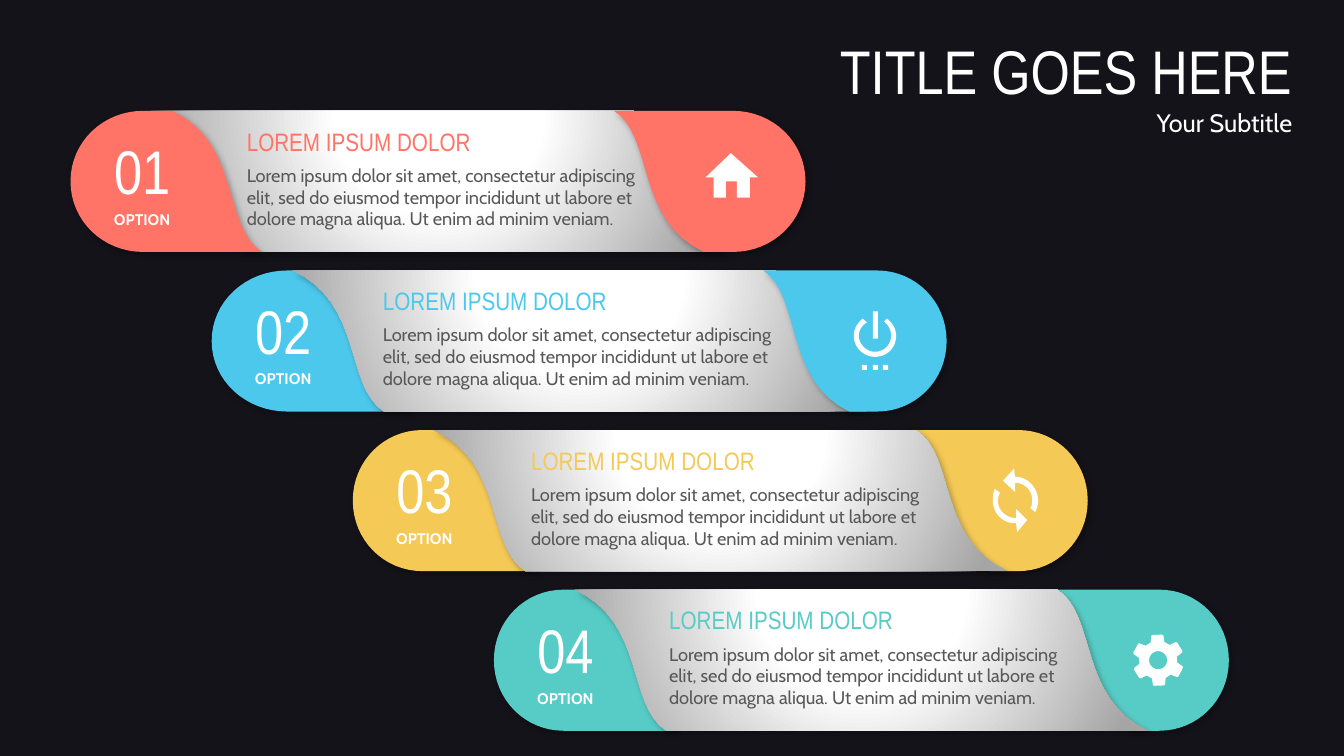
from dataclasses import dataclass
from math import cos, radians, sin

from lxml import etree
from pptx import Presentation
from pptx.dml.color import RGBColor
from pptx.enum.text import MSO_ANCHOR as Anchor, MSO_AUTO_SIZE as AutoSize, PP_ALIGN as Align
from pptx.oxml import parse_xml
from pptx.oxml.ns import nsdecls, qn
from pptx.util import Pt

Point = tuple[float, float]
Contour = list[Point]

NARROW, CABIN = "Arial Narrow", "Cabin"
WHITE, BODY_GREY, NIGHT = "FFFFFF", "585858", "14131A"
ROW_LEFT, ROW_TOP, ROW_STEP_X, ROW_STEP_Y = 50.4, 79.2, 100.8, 114
ROW_WIDTH, ROW_HEIGHT = 525, 100.8
BAND_OFFSET, BAND_WIDTH = 57.6, 410.4
HUNDREDTH_INCH = 0.72
LOREM = ("Lorem ipsum dolor sit amet, consectetur adipiscing elit, sed do eiusmod tempor "
         "incididunt ut labore et dolore magna aliqua. Ut enim ad minim veniam.")

LEFT_CAP = ("M .38 0 L .53 0 C .89 .22 .79 .82 1 1 L .38 1 "
            "C .17 1 0 .78 0 .5 C 0 .22 .17 0 .38 0")
BAND = "M 0 0 L .84 0 C .91 .18 .875 .77 1 1 L .16 1 C .09 .82 .125 .23 0 0"
HOME = ("M 20 44 L 20 28 L 31 28 L 31 44 L 44 44 L 44 24 L 52 24 "
        "L 25 0 L 0 24 L 8 24 L 8 44")
POWER = ("M 33 7 L 30 10 C 34 13 37 18 37 24 C 37 33 30 40 21 40 C 13 40 5 33 5 24 "
         "C 5 18 9 13 13 11 L 9 7 C 4 11 0 17 0 24 C 0 36 10 45 21 45 "
         "C 33 45 42 36 42 24 C 42 17 38 11 33 7 M 19 0 L 24 0 L 24 27 L 19 27 "
         + " ".join(f"M {x} 53 L {x + 5} 53 L {x + 5} 58 L {x} 58" for x in (8, 19, 29)))
SYNC = ("M 22 8 L 21 0 L 10 12 L 22 23 L 22 14 C 31 14 39 21 39 31 C 39 33 39 37 37 39 "
        "L 42 43 C 44 39 45 35 45 31 C 44 18 34 8 22 8 "
        "M 23 49 C 13 49 5 41 5 32 C 5 29 6 26 7 24 L 2 20 C 0 24 0 28 0 32 "
        "C 0 45 11 55 23 54 L 24 63 L 34 51 L 23 40 L 23 49")


@dataclass
class Option:
    number: str
    colour: str
    icon: list[Contour]
    icon_at: Point
    text_left: float
    left_cap: float = 131
    right_cap: float = 131
    layers: str = "left right band"


def trace(outline: str) -> list[Contour]:
    contours: list[Contour] = []
    tokens = iter(outline.split())
    for command in tokens:
        pairs = [(float(next(tokens)), float(next(tokens)))
                 for _ in range(3 if command == "C" else 1)]
        if command == "M":
            contours.append(pairs)
        elif command == "L":
            contours[-1] += pairs
        else:
            curve = [contours[-1][-1], *pairs]
            for step in range(1, 17):
                t = step / 16
                weights = ((1 - t) ** 3, 3 * t * (1 - t) ** 2, 3 * t * t * (1 - t), t ** 3)
                contours[-1].append((sum(w * x for w, (x, _) in zip(weights, curve)),
                                     sum(w * y for w, (_, y) in zip(weights, curve))))
    return contours


def polar(radius: float, degrees: float) -> Point:
    return 25 + radius * cos(radians(degrees)), 25 + radius * sin(radians(degrees))


def gear() -> list[Contour]:
    tooth = ((-21, 19), (-14, 25), (-11, 25.7), (11, 25.7), (14, 25), (21, 19))
    rim = [polar(radius, 60 * k - 92 + turn) for k in range(6) for turn, radius in tooth]
    return [rim, [polar(9, -10 * k) for k in range(36)]]


def paint(target, colour: str) -> None:
    if hasattr(target, "solid"):
        target.solid()
        target = target.fore_color
    target.rgb = RGBColor.from_string(colour)


def apply(target, values: dict) -> None:
    for name, value in values.items():
        setattr(target, name, value)


def draw(shapes, contours: list[Contour], left: float, top: float,
         width: float, height: float, colour: str):
    placed = [[(Pt(left + x * width), Pt(top + y * height)) for x, y in contour]
              for contour in contours]
    builder = shapes.build_freeform(*placed[0][0], scale=1.0)
    for index, (start, *rest) in enumerate(placed):
        if index:
            builder.move_to(*start)
        builder.add_line_segments(rest, close=True)
    figure = builder.convert_to_shape()
    figure.shadow.inherit = False
    paint(figure.fill, colour)
    figure.line.fill.background()
    return figure


def cast_shadow(figure) -> None:
    effects = figure._element.spPr.find(qn("a:effectLst"))
    shade = etree.SubElement(effects, qn("a:outerShdw"), blurRad=str(Pt(4.5)),
                             dist=str(Pt(2.6)), dir="3180000", algn="ctr", rotWithShape="0")
    black = etree.SubElement(shade, qn("a:srgbClr"), val="000000")
    etree.SubElement(black, qn("a:alpha"), val="30000")


def add_sheen(figure) -> None:
    stops = "".join(f'<a:gs pos="{position}"><a:srgbClr val="{colour}"/></a:gs>'
                    for position, colour in ((0, WHITE), (35000, WHITE), (100000, "A5A5A5")))
    sheen = parse_xml(f'<a:gradFill {nsdecls("a")} rotWithShape="1"><a:gsLst>{stops}</a:gsLst>'
                      '<a:path path="circle"><a:fillToRect l="50000" t="-80000" '
                      'r="50000" b="180000"/></a:path></a:gradFill>')
    properties = figure._element.spPr
    properties.replace(properties.find(qn("a:solidFill")), sheen)


def write(holder, box: tuple[float, float, float, float], align, lines: list[tuple]) -> None:
    apply(holder, dict(zip(("left", "top", "width", "height"), map(Pt, box))))
    frame = holder.text_frame
    apply(frame, dict(word_wrap=True, auto_size=AutoSize.NONE, vertical_anchor=Anchor.TOP,
                      margin_left=Pt(7.2), margin_right=Pt(7.2),
                      margin_top=Pt(3.6), margin_bottom=Pt(3.6)))
    for index, (words, font, size, bold, colour, gap) in enumerate(lines):
        paragraph = frame.add_paragraph() if index else frame.paragraphs[0]
        apply(paragraph, dict(alignment=align, line_spacing=1.0, space_before=Pt(gap)))
        run = paragraph.add_run()
        run.text = words
        apply(run.font, dict(name=font, size=Pt(size), bold=bold))
        paint(run.font.color, colour)


def draw_option(shapes, option: Option, row: int) -> None:
    left, top = ROW_LEFT + row * ROW_STEP_X, ROW_TOP + row * ROW_STEP_Y
    cap = trace(LEFT_CAP)
    turned_cap = [[(1 - x, 1 - y) for x, y in contour] for contour in cap]
    parts = {
        "left": (cap, left, option.left_cap),
        "right": (turned_cap, left + ROW_WIDTH - option.right_cap, option.right_cap),
        "band": (trace(BAND), left + BAND_OFFSET, BAND_WIDTH),
    }
    for layer in option.layers.split():
        contours, start, width = parts[layer]
        piece = draw(shapes, contours, start, top, width, ROW_HEIGHT, option.colour)
        cast_shadow(piece)
        if layer == "band":
            add_sheen(piece)
    draw(shapes, option.icon, *option.icon_at, HUNDREDTH_INCH, HUNDREDTH_INCH, WHITE)
    write(shapes.add_textbox(0, 0, 0, 0), (left + 12.24, top + 12.24, 77.76, 76.32),
          Align.CENTER, [(option.number, NARROW, 44, False, WHITE, 0),
                         ("OPTION", CABIN, 11, True, WHITE, 2.2)])
    write(shapes.add_textbox(0, 0, 0, 0), (option.text_left, top + 7.2, 303.84, 87.12),
          Align.LEFT, [("LOREM IPSUM DOLOR", NARROW, 18, False, option.colour, 0),
                       (LOREM, CABIN, 13, False, BODY_GREY, 5.6)])


OPTIONS = [
    Option("01", "FF7467", trace(HOME), (504, 109.44), 169.2, 136.8, 136.8, "band right left"),
    Option("02", "4CC8EC", trace(POWER), (609.84, 222.48), 266.4, 142.5, 131, "left band right"),
    Option("03", "F4C956", trace(SYNC), (709.2, 334.8), 372.24),
    Option("04", "57CCC6", gear(), (809.28, 453.6), 470.88),
]


def main() -> None:
    deck = Presentation()
    apply(deck, dict(slide_width=Pt(960), slide_height=Pt(540)))
    slide = deck.slides.add_slide(deck.slide_layouts[0])
    paint(slide.background.fill, NIGHT)
    title, subtitle = slide.placeholders
    write(title, (496.8, 20.16, 433.44, 60), Align.RIGHT,
          [("TITLE GOES HERE", NARROW, 44, False, WHITE, 0)])
    write(subtitle, (496.8, 73.4, 433.44, 29), Align.RIGHT,
          [("Your Subtitle", CABIN, 18, False, WHITE, 0)])
    for row, option in enumerate(OPTIONS):
        draw_option(slide.shapes, option, row)
    deck.save("out.pptx")


if __name__ == "__main__":
    main()
